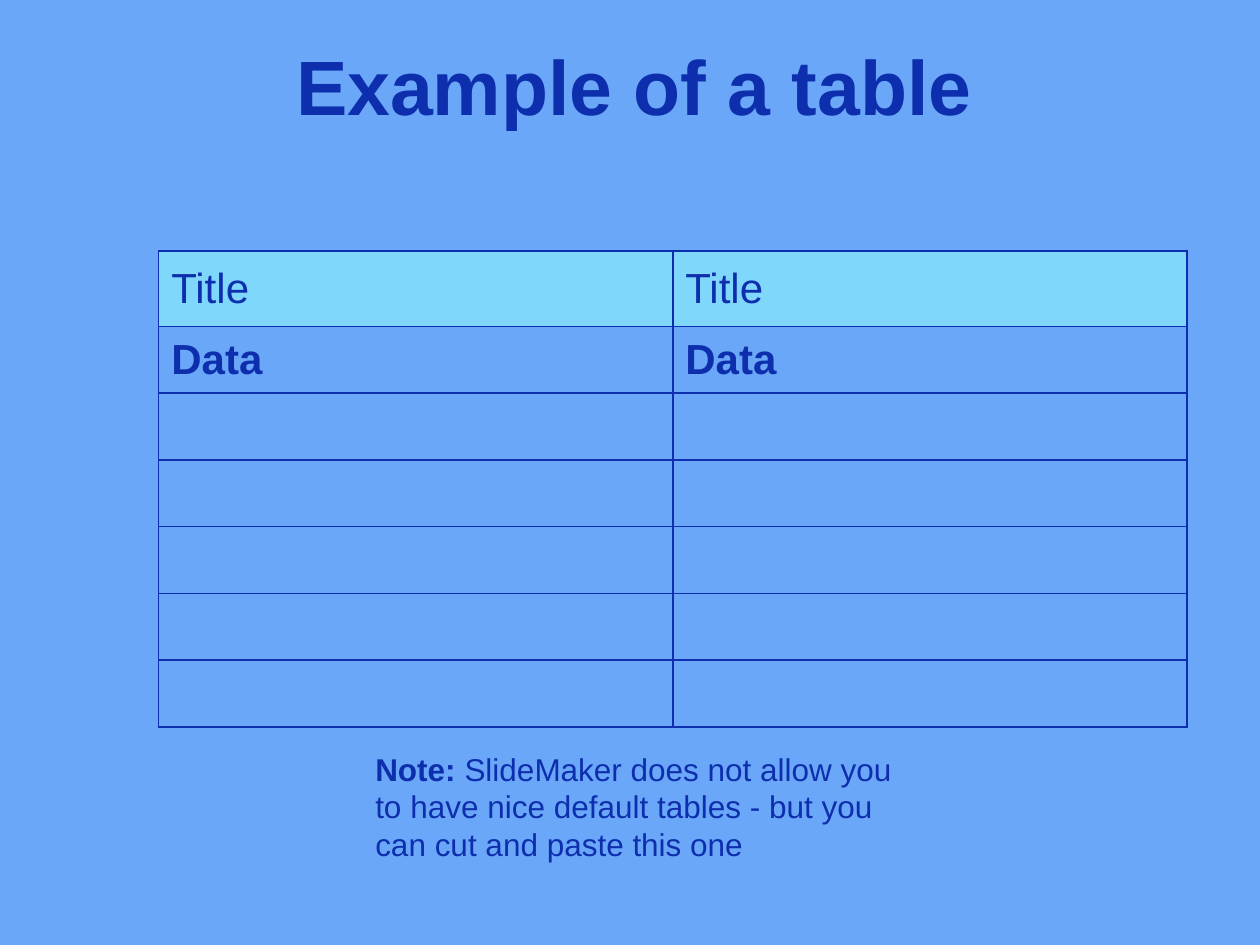
from pptx import Presentation
from pptx.dml.color import RGBColor
from pptx.enum.text import MSO_ANCHOR as Anchor, MSO_AUTO_SIZE as Fit, PP_ALIGN as Align
from pptx.oxml import parse_xml
from pptx.oxml.ns import nsdecls
from pptx.util import Inches, Pt

BACK = RGBColor(0x6B, 0xA7, 0xF8)
INK = RGBColor(0x0E, 0x2F, 0xAD)
HEAD = RGBColor(0x7F, 0xD7, 0xFC)
FONT = "Arial"
COLS, ROWS = 100, 75  # slide grid
UNIT = Inches(0.1)

DATA = [["Title", "Title"], ["Data", "Data"]] + [["", ""]] * 5
TALL = [6] + [5.3] * 6


def span(*cells):
    """Turn grid steps into lengths."""
    return [round(n * UNIT) for n in cells]


def style(run, size, bold=False):
    font = run.font
    font.name, font.size, font.bold = FONT, Pt(size), bold
    font.color.rgb = INK


def add_title(slide, box):
    title = slide.shapes.title
    title.left, title.top, title.width, title.height = span(*box)
    frame = title.text_frame
    frame.text = "Example of a table"
    frame.vertical_anchor = Anchor.MIDDLE
    frame.auto_size = Fit.NONE
    para = frame.paragraphs[0]
    para.alignment = Align.CENTER
    style(para.runs[0], 44, True)


def add_edges(cell):
    props = cell._tc.get_or_add_tcPr()
    for side in "LRTB":
        props.append(parse_xml(
            f'<a:ln{side} {nsdecls("a")} w="{Pt(1)}"><a:solidFill>'
            f'<a:srgbClr val="{INK}"/></a:solidFill></a:ln{side}>'))


def fill_cell(cell, text, row):
    add_edges(cell)
    if row == 0:
        cell.fill.solid()
        cell.fill.fore_color.rgb = HEAD
    else:
        cell.fill.background()
    cell.vertical_anchor = Anchor.MIDDLE
    if text:
        cell.text_frame.text = text
        style(cell.text_frame.paragraphs[0].runs[0], 24, row == 1)


def add_grid(slide, box):
    table = slide.shapes.add_table(len(DATA), len(DATA[0]), *span(*box)).table
    table.first_row = table.horz_banding = False
    for col in table.columns:
        col.width = round(box[2] * UNIT / len(DATA[0]))
    for row, texts in enumerate(DATA):
        table.rows[row].height = round(TALL[row] * UNIT)
        for col, text in enumerate(texts):
            fill_cell(table.cell(row, col), text, row)


def add_note(slide, box):
    frame = slide.shapes.add_textbox(*span(*box)).text_frame
    frame.word_wrap = True
    frame.auto_size = Fit.SHAPE_TO_FIT_TEXT
    para = frame.paragraphs[0]
    parts = [("Note: ", True),
             ("SlideMaker does not allow you to have nice default tables"
              " - but you can cut and paste this one", False)]
    for text, bold in parts:
        run = para.add_run()
        run.text = text
        style(run, 18, bold)


def main():
    deck = Presentation()
    deck.slide_width, deck.slide_height = span(COLS, ROWS)
    slide = deck.slides.add_slide(deck.slide_layouts[5])
    slide.background.fill.solid()
    slide.background.fill.fore_color.rgb = BACK
    add_title(slide, (5, 2.8, 90.7, 7.9))
    add_grid(slide, (12.6, 19.9, 81.6, sum(TALL)))
    add_note(slide, (28.8, 59, 44.9, 10))
    deck.save("out.pptx")


if __name__ == "__main__":
    main()
